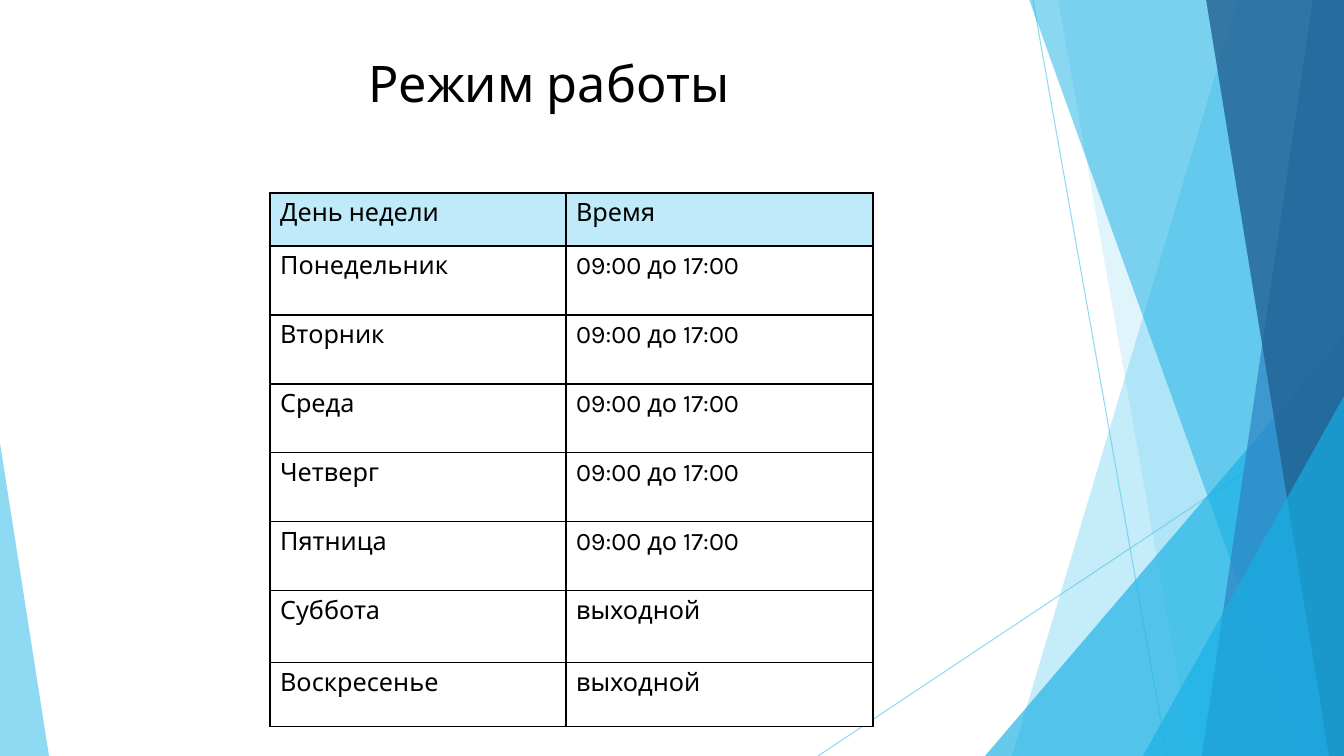
from lxml.etree import SubElement
from pptx import Presentation
from pptx.dml.color import RGBColor
from pptx.enum.shapes import MSO_CONNECTOR, MSO_SHAPE
from pptx.enum.text import PP_ALIGN
from pptx.oxml import parse_xml
from pptx.oxml.ns import nsdecls, qn
from pptx.util import Emu, Pt

SCALE = 914400 / 100.8
WIDTH, HEIGHT = 1344, 756


def px(*lengths):
    return [Emu(round(length * SCALE)) for length in lengths]


def write(frame, text, size=18, align=PP_ALIGN.LEFT, color="000000", font="Karla"):
    frame.word_wrap = True
    paragraph = frame.paragraphs[0]
    paragraph.alignment = align
    run = paragraph.add_run()
    run.text = text
    run.font.size = Pt(size)
    run.font.name = font
    run.font.color.rgb = RGBColor.from_string(color)


deck = Presentation()
deck.slide_width, deck.slide_height = px(WIDTH, HEIGHT)
slide = deck.slides.add_slide(deck.slide_layouts[6])
shapes = slide.shapes

for ends in [(1033, 0, 1167, HEIGHT), (WIDTH, 406, 818, HEIGHT)]:
    ray = shapes.add_connector(MSO_CONNECTOR.STRAIGHT, *px(*ends))
    ray.line.color.rgb = RGBColor.from_string("5FCBEF")
    ray.line.width = Pt(0.75)
    ray_color = ray.line._ln.find(".//" + qn("a:srgbClr"))
    SubElement(ray_color, qn("a:alpha"), val="70000")
    SubElement(ray._element.spPr, qn("a:effectLst"))

facets = [
    ("band", (1238, 1012), "5FCBEF", 36),
    ("band", (1058, 1192), "5FCBEF", 20),
    ("triangle", (985, 336, 359, 1), "17B0E4", 66),
    ("band", (1029, 1301), "17B0E4", 50),
    ("band", (1313, 1202), "2E83C3", 70),
    ("band", (1206, 1329), "226292", 80),
    ("triangle", (1143, 396, 201, 1), "17B0E4", 66),
    ("triangle", (0, 443, 49, 0), "5FCBEF", 70),
]
for kind, place, color, opacity in facets:
    if kind == "band":
        top_left, bottom_left = place
        outline = shapes.build_freeform(top_left, -1, scale=SCALE)
        outline.add_line_segments([(WIDTH, -1), (WIDTH, HEIGHT), (bottom_left, HEIGHT)])
        facet = outline.convert_to_shape()
    else:
        left, top, width, apex = place
        facet = shapes.add_shape(
            MSO_SHAPE.ISOSCELES_TRIANGLE, *px(left, top, width, HEIGHT - top)
        )
        facet.adjustments[0] = apex
    facet.shadow.inherit = False
    facet.line.fill.background()
    facet.fill.solid()
    facet.fill.fore_color.rgb = RGBColor.from_string(color)
    facet_color = facet._element.spPr.find(".//" + qn("a:srgbClr"))
    SubElement(facet_color, qn("a:alpha"), val=str(opacity * 1000))

title = shapes.add_textbox(*px(75, 47, 948, 145))
write(title.text_frame, "Режим работы", size=36, align=PP_ALIGN.CENTER)

workday = "09:00 до 17:00"
day_off = "выходной"
schedule = [
    ("День недели", "Время", 53),
    ("Понедельник", workday, 69),
    ("Вторник", workday, 69),
    ("Среда", workday, 69),
    ("Четверг", workday, 69),
    ("Пятница", workday, 69),
    ("Суббота", day_off, 72),
    ("Воскресенье", day_off, 64),
]
timetable = shapes.add_table(len(schedule), 2, *px(270, 193, 603, 534)).table
for column, width in zip(timetable.columns, px(296, 307)):
    column.width = width
for row_index, (day, hours, height) in enumerate(schedule):
    timetable.rows[row_index].height = px(height)[0]
    for column_index, text in enumerate((day, hours)):
        cell = timetable.cell(row_index, column_index)
        cell.fill.solid()
        cell.fill.fore_color.rgb = RGBColor.from_string("FFFFFF" if row_index else "BFEAF9")
        write(cell.text_frame, text)
        for position, side in enumerate(("lnL", "lnR", "lnT", "lnB")):
            border = parse_xml(
                f'<a:{side} {nsdecls("a")} w="12700"><a:solidFill>'
                f'<a:srgbClr val="000000"/></a:solidFill></a:{side}>'
            )
            cell._tc.get_or_add_tcPr().insert(position, border)

deck.save("out.pptx")
